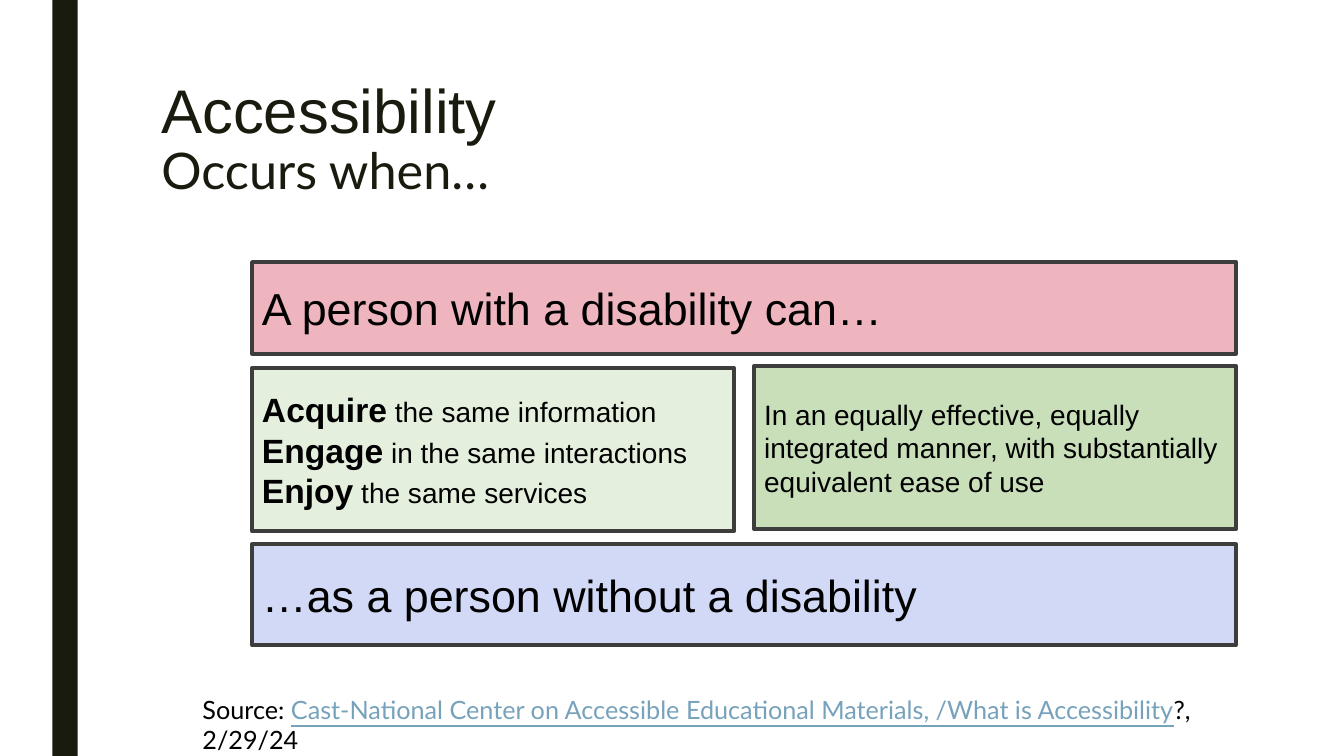
from pptx import Presentation
from pptx.dml.color import RGBColor
from pptx.enum import shapes, text
from pptx.util import Inches, Pt

INK = RGBColor(0x19, 0x1B, 0x0E)
BLACK = RGBColor(0, 0, 0)
BORDER = RGBColor(0x3D, 0x3E, 0x3B)
PINK = RGBColor(0xEE, 0xB5, 0xBF)
PALE_GREEN = RGBColor(0xE4, 0xF0, 0xDD)
GREEN = RGBColor(0xC9, 0xDF, 0xBA)
LAVENDER = RGBColor(0xD2, 0xD9, 0xF6)
LINK_BLUE = RGBColor(0x77, 0xA2, 0xBB)


def add_text(paragraph, wording, size=20, font="Arial", color=BLACK, bold=False, underline=False):
    run = paragraph.add_run()
    run.text = wording
    run.font.size = Pt(size)
    run.font.name = font
    run.font.color.rgb = color
    run.font.bold = bold
    run.font.underline = underline


def add_panel(slide, left, top, width, height, fill, border=None):
    """Add a filled rectangle and return its text frame."""
    panel = slide.shapes.add_shape(
        shapes.MSO_SHAPE.RECTANGLE, Inches(left), Inches(top), Inches(width), Inches(height))
    panel.shadow.inherit = False
    panel.fill.solid()
    panel.fill.fore_color.rgb = fill
    if border is None:
        panel.line.fill.background()
    else:
        panel.line.color.rgb = border
        panel.line.width = Pt(2.75)
    frame = panel.text_frame
    frame.word_wrap = True
    frame.vertical_anchor = text.MSO_ANCHOR.MIDDLE
    frame.paragraphs[0].alignment = text.PP_ALIGN.LEFT
    return frame


def add_heading(slide, left, top, width, height):
    title = slide.shapes.title
    title.left, title.top = Inches(left), Inches(top)
    title.width, title.height = Inches(width), Inches(height)
    frame = title.text_frame
    frame.word_wrap = True
    frame.auto_size = text.MSO_AUTO_SIZE.NONE
    frame.vertical_anchor = text.MSO_ANCHOR.TOP
    heading = frame.paragraphs[0]
    heading.alignment = text.PP_ALIGN.LEFT
    heading.line_spacing = 0.89
    add_text(heading, "Accessibility", size=44, color=INK)
    heading.add_line_break()
    add_text(heading, "Occurs when…", size=36, font="Lato", color=INK)


def add_definition(slide, left, top, width):
    """Stack the two full-width statements around the pair of conditions."""
    half = (width - 0.2) / 2
    opening = add_panel(slide, left, top, width, 0.91, PINK, BORDER)
    add_text(opening.paragraphs[0], "A person with a disability can…", size=32)

    actions = add_panel(slide, left, top + 1.05, half, 1.62, PALE_GREEN, BORDER)
    rights = [("Acquire", " the same information"),
              ("Engage", " in the same interactions"),
              ("Enjoy", " the same services")]
    for index, (verb, rest) in enumerate(rights):
        line = actions.add_paragraph() if index else actions.paragraphs[0]
        line.alignment = text.PP_ALIGN.LEFT
        add_text(line, verb, size=24, bold=True)
        add_text(line, rest)

    manner = add_panel(slide, left + width - half, top + 1.03, half, 1.62, GREEN, BORDER)
    add_text(manner.paragraphs[0], "In an equally effective, equally integrated manner, "
             "with substantially equivalent ease of use")

    closing = add_panel(slide, left, top + 2.8, width, 1, LAVENDER, BORDER)
    add_text(closing.paragraphs[0], "…as a person without a disability", size=32)


def add_source(slide, left, top, width, height):
    box = slide.shapes.add_textbox(Inches(left), Inches(top), Inches(width), Inches(height))
    box.text_frame.word_wrap = True
    source = box.text_frame.paragraphs[0]
    add_text(source, "Source: ", size=18, font="Lato")
    add_text(source, "Cast-National Center on Accessible Educational Materials, /What is Accessibility",
             size=18, font="Lato", color=LINK_BLUE, underline=True)
    add_text(source, "?, 2/29/24", size=18, font="Lato")


def main():
    deck = Presentation()
    deck.slide_width, deck.slide_height = Inches(13.33), Inches(7.5)
    slide = deck.slides.add_slide(deck.slide_layouts[5])
    add_panel(slide, 0.52, 0, 0.25, 7.5, INK)
    add_heading(slide, 1.5, 0.75, 10.5, 1.62)
    add_definition(slide, 2.5, 2.6, 9.76)
    add_source(slide, 1.91, 6.84, 10.56, 0.71)
    deck.save("out.pptx")


if __name__ == "__main__":
    main()
